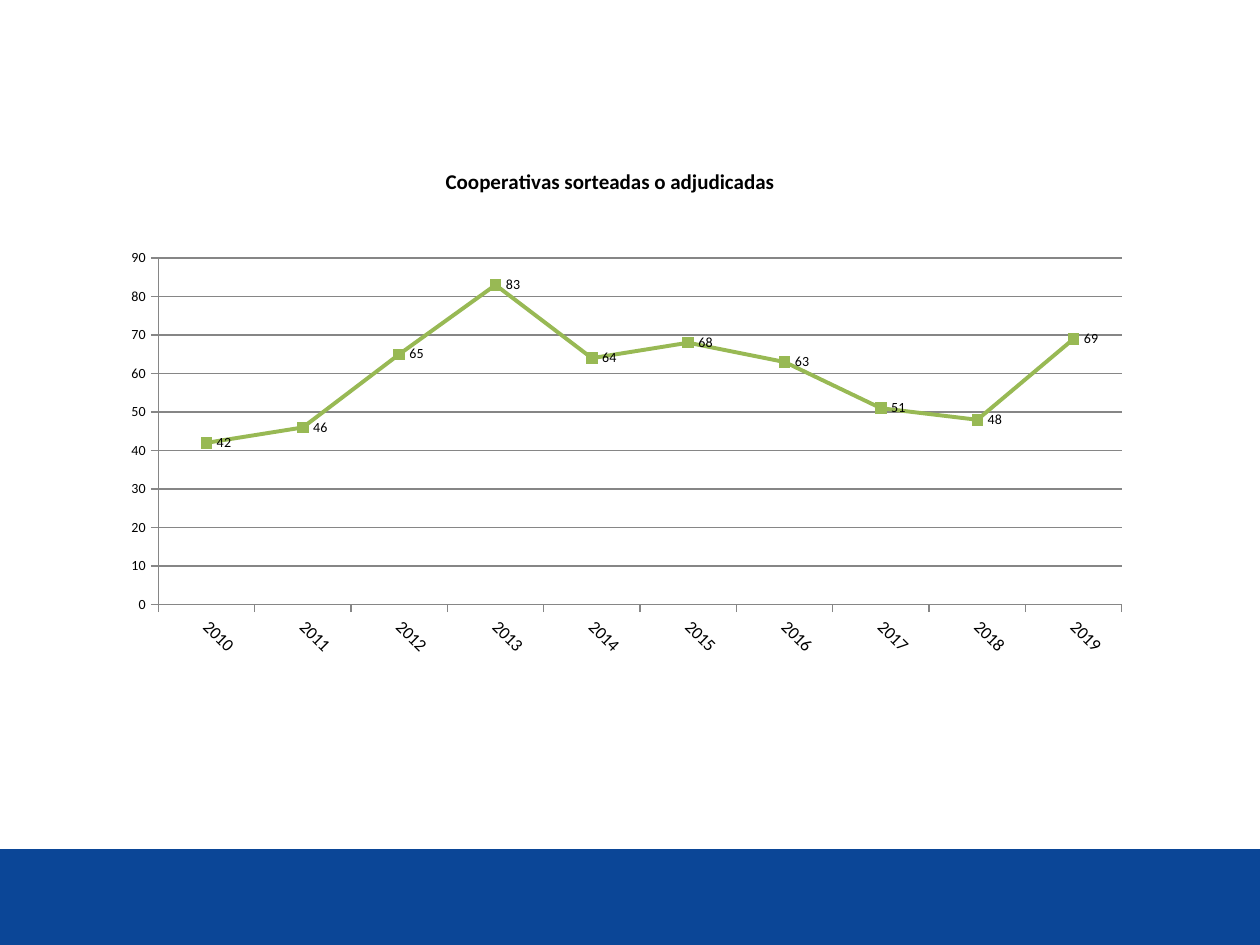
from dataclasses import dataclass

from lxml.etree import SubElement
from pptx import Presentation
from pptx.chart.data import CategoryChartData
from pptx.dml.color import RGBColor as Rgb
from pptx.enum.chart import XL_CHART_TYPE as ChartType
from pptx.enum.chart import XL_LABEL_POSITION as LabelPosition
from pptx.enum.chart import XL_MARKER_STYLE as Marker
from pptx.enum.chart import XL_TICK_MARK as Tick
from pptx.enum.shapes import MSO_SHAPE as Shape
from pptx.oxml.ns import qn
from pptx.util import Cm, Pt


@dataclass(frozen=True)
class Theme:
    font: str = "Calibri"
    ink: Rgb = Rgb(0, 0, 0)
    band: Rgb = Rgb(0x0B, 0x46, 0x97)
    trend: Rgb = Rgb(0x98, 0xB9, 0x54)
    grid: Rgb = Rgb(0x86, 0x86, 0x86)
    title_size: int = 12
    year_size: int = 10
    value_size: int = 8


class SlideBuilder:
    """Draws the elements of one slide in a shared theme."""

    def __init__(self, slide, theme):
        self.slide = slide
        self.theme = theme

    def style_font(self, font, size, bold=False):
        font.name = self.theme.font
        font.size = Pt(size)
        font.bold = bold
        font.color.rgb = self.theme.ink

    def style_line(self, line, color, width):
        line.color.rgb = color
        line.width = Pt(width)

    def band(self, left, top, width, height):
        footer = self.slide.shapes.add_shape(
            Shape.RECTANGLE, Cm(left), Cm(top), Cm(width), Cm(height))
        footer.shadow.inherit = False
        footer.fill.solid()
        footer.fill.fore_color.rgb = self.theme.band
        footer.line.fill.background()

    def place_plot(self, chart, **bounds):
        plot_area = chart.plots[0]._element.getparent()
        layout = plot_area.find(qn("c:layout"))
        if layout is None:
            layout = SubElement(plot_area, qn("c:layout"))
            plot_area.insert(0, layout)
        manual = SubElement(layout, qn("c:manualLayout"))
        settings = {"layoutTarget": "inner", "xMode": "edge", "yMode": "edge", **bounds}
        for name, setting in settings.items():
            SubElement(manual, qn(f"c:{name}")).set("val", str(setting))

    def style_axis(self, axis, size):
        self.style_font(axis.tick_labels.font, size)
        self.style_line(axis.format.line, self.theme.grid, 0.75)
        axis.major_tick_mark = Tick.OUTSIDE
        axis.minor_tick_mark = Tick.NONE

    def line_chart(self, left, top, width, height, title, counts):
        theme = self.theme
        yearly = CategoryChartData()
        yearly.categories = list(counts)
        yearly.add_series("Series 1", list(counts.values()))
        chart = self.slide.shapes.add_chart(
            ChartType.LINE_MARKERS, Cm(left), Cm(top), Cm(width), Cm(height), yearly).chart
        self.style_font(chart.font, theme.year_size)
        chart.has_legend = False

        heading = chart.chart_title.text_frame
        heading.text = title
        self.style_font(heading.paragraphs[0].runs[0].font, theme.title_size, bold=True)
        chart.chart_title.include_in_layout = False
        self.place_plot(chart, x=0.086, y=0.19, w=0.883, h=0.582)

        years, scale = chart.category_axis, chart.value_axis
        self.style_axis(years, theme.year_size)
        self.style_axis(scale, theme.value_size)
        years._element.find(qn("c:txPr")).find(qn("a:bodyPr")).set("rot", "2700000")
        scale.minimum_scale, scale.maximum_scale, scale.major_unit = 0, 90, 10
        scale.has_major_gridlines = True
        self.style_line(scale.major_gridlines.format.line, theme.grid, 0.75)

        plot = chart.plots[0]
        plot.vary_by_categories = False
        trend = plot.series[0]
        trend.smooth = False
        self.style_line(trend.format.line, theme.trend, 2.25)
        trend.marker.style = Marker.SQUARE
        trend.marker.size = 6
        trend.marker.format.fill.solid()
        trend.marker.format.fill.fore_color.rgb = theme.trend
        trend.marker.format.line.color.rgb = theme.trend

        labels = trend.data_labels
        labels.show_value = True
        labels.position = LabelPosition.RIGHT
        self.style_font(labels.font, theme.value_size)


def main():
    deck = Presentation()
    deck.slide_width, deck.slide_height = Cm(25.4), Cm(19.05)
    builder = SlideBuilder(deck.slides.add_slide(deck.slide_layouts[6]), Theme())
    builder.band(0, 17.12, 25.4, 1.93)
    awarded = [42, 46, 65, 83, 64, 68, 63, 51, 48, 69]
    counts = {str(year): count for year, count in enumerate(awarded, start=2010)}
    builder.line_chart(1.3, 2.92, 22, 12.01, "Cooperativas sorteadas o adjudicadas", counts)
    deck.save("out.pptx")


if __name__ == "__main__":
    main()
